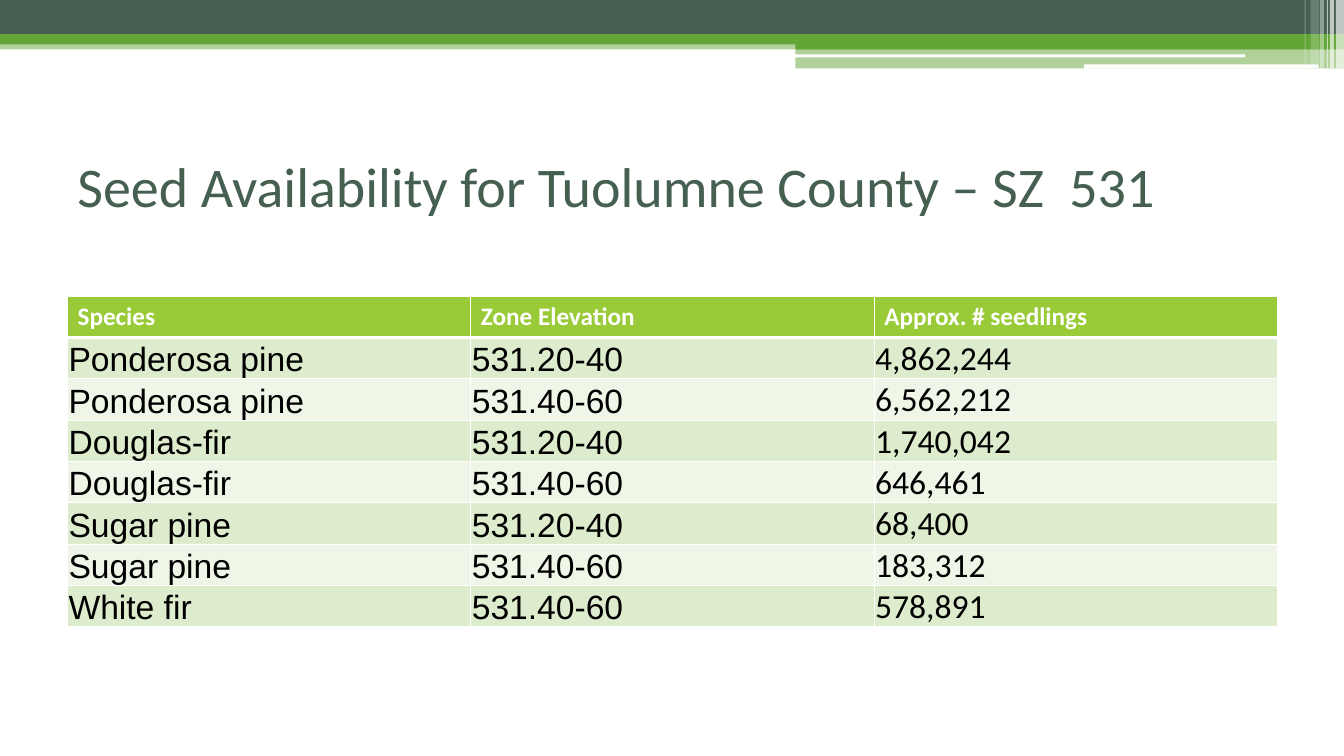
from dataclasses import dataclass

from lxml import etree
from pptx import Presentation
from pptx.dml.color import RGBColor
from pptx.enum import shapes, text
from pptx.oxml import ns
from pptx.util import Inches, Pt


@dataclass(frozen=True)
class Theme:
    """Colours, fonts and type sizes of the slide."""
    dark: str = "455F51"
    green: str = "63A537"
    lime: str = "99CB38"
    white: str = "FFFFFF"
    black: str = "000000"
    bands: tuple = ("DEECCE", "EFF6E8")
    font: str = "Calibri"
    body_font: str = "Arial"
    title_size: int = 40
    header_size: int = 18
    body_size: int = 24


T = Theme()

HEADER = ("Species", "Zone Elevation", "Approx. # seedlings")
SEEDLINGS = (
    ("Ponderosa pine", "531.20-40", "4,862,244"),
    ("Ponderosa pine", "531.40-60", "6,562,212"),
    ("Douglas-fir", "531.20-40", "1,740,042"),
    ("Douglas-fir", "531.40-60", "646,461"),
    ("Sugar pine", "531.20-40", "68,400"),
    ("Sugar pine", "531.40-60", "183,312"),
    ("White fir", "531.40-60", "578,891"),
)


def write(tf, content, size, color, font=T.font, bold=False):
    """Put one formatted run into a text frame."""
    r = tf.paragraphs[0].add_run()
    r.text = content
    r.font.size = Pt(size)
    r.font.name = font
    r.font.bold = bold
    r.font.color.rgb = RGBColor.from_string(color)


def add_bar(s, x, y, w, h, color, alpha=100, rounded=False):
    """Draw a borderless bar with optional transparency."""
    kind = shapes.MSO_SHAPE.ROUNDED_RECTANGLE if rounded else shapes.MSO_SHAPE.RECTANGLE
    sp = s.shapes.add_shape(kind, Inches(x), Inches(y), Inches(w), Inches(h))
    sp.shadow.inherit = False
    sp.line.fill.background()
    sp.fill.solid()
    sp.fill.fore_color.rgb = RGBColor.from_string(color)
    if alpha < 100:
        clr = sp.fill._xPr.find(".//" + ns.qn("a:srgbClr"))
        etree.SubElement(clr, ns.qn("a:alpha"), val=str(alpha * 1000))


def add_banner(s, x, y, w):
    """Draw the layered banner across the top, with pale stripes at its right end."""
    right = x + w
    step = 5.44
    add_bar(s, x, y + 0.4, w, 0.09, T.green, 50)
    add_bar(s, x, y, w, 0.34, T.dark)
    add_bar(s, x, y + 0.34, w, 0.1, T.green)
    add_bar(s, right - step, y + 0.39, step, 0.1, T.green)
    add_bar(s, right - step, y + 0.48, step, 0.2, T.green, 50)
    add_bar(s, right - 5.45, y + 0.54, 4.47, 0.03, T.white, rounded=True)
    add_bar(s, right - 2.58, y + 0.64, 2.33, 0.04, T.white, rounded=True)
    stripes = ((0.08, 0.08, 0.68, 65), (0.14, 0.04, 0.68, 65), (0.17, 0.01, 0.68, 60),
               (0.24, 0.04, 0.68, 40), (0.33, 0.08, 0.64, 20), (0.39, 0.01, 0.64, 30))
    for inset, width, height, alpha in stripes:
        add_bar(s, right - inset, y, width, height, T.white, alpha)


def add_title(s, x, y, w, h, content):
    """Place the slide title, centred vertically in its box."""
    tf = s.shapes.add_textbox(Inches(x), Inches(y), Inches(w), Inches(h)).text_frame
    tf.word_wrap = True
    tf.vertical_anchor = text.MSO_ANCHOR.MIDDLE
    write(tf, content, T.title_size, T.dark)


def set_borders(cell, top, bottom):
    """Give a cell white borders, with top and bottom widths in points."""
    tc_pr = cell._tc.get_or_add_tcPr()
    for side, width in (("L", 1), ("R", 1), ("T", top), ("B", bottom)):
        ln = etree.SubElement(tc_pr, ns.qn("a:ln" + side), w=str(Pt(width)))
        fill = etree.SubElement(ln, ns.qn("a:solidFill"))
        etree.SubElement(fill, ns.qn("a:srgbClr"), val=T.white)


def format_cell(cell, row, col, content):
    """Fill in one table cell as a header or banded body cell."""
    set_borders(cell, 3 if row == 1 else 1, 3 if row == 0 else 1)
    cell.fill.solid()
    if row == 0:
        color = T.lime
        write(cell.text_frame, content, T.header_size, T.white, bold=True)
    else:
        color = T.bands[(row - 1) % 2]
        cell.vertical_anchor = text.MSO_ANCHOR.BOTTOM
        cell.margin_left = cell.margin_right = cell.margin_top = Inches(0.01)
        cell.margin_bottom = 0
        font = T.font if col == len(HEADER) - 1 else T.body_font
        write(cell.text_frame, content, T.body_size, T.black, font)
    cell.fill.fore_color.rgb = RGBColor.from_string(color)


def add_seed_table(s, x, y, w, h):
    """Place the seedling table with equal rows and columns."""
    rows = (HEADER, *SEEDLINGS)
    table = s.shapes.add_table(len(rows), len(HEADER), Inches(x), Inches(y),
                               Inches(w), Inches(h)).table
    for i, row in enumerate(rows):
        for j, content in enumerate(row):
            format_cell(table.cell(i, j), i, j, content)


def main():
    """Build the slide and save it."""
    prs = Presentation()
    prs.slide_width, prs.slide_height = Inches(13.33), Inches(7.5)
    s = prs.slides.add_slide(prs.slide_layouts[6])
    add_banner(s, 0, 0, 13.33)
    add_title(s, 0.67, 1.25, 12, 1.17, "Seed Availability for Tuolumne County – SZ  531")
    add_seed_table(s, 0.67, 2.94, 12, 3.26)
    prs.save("out.pptx")


if __name__ == "__main__":
    main()
